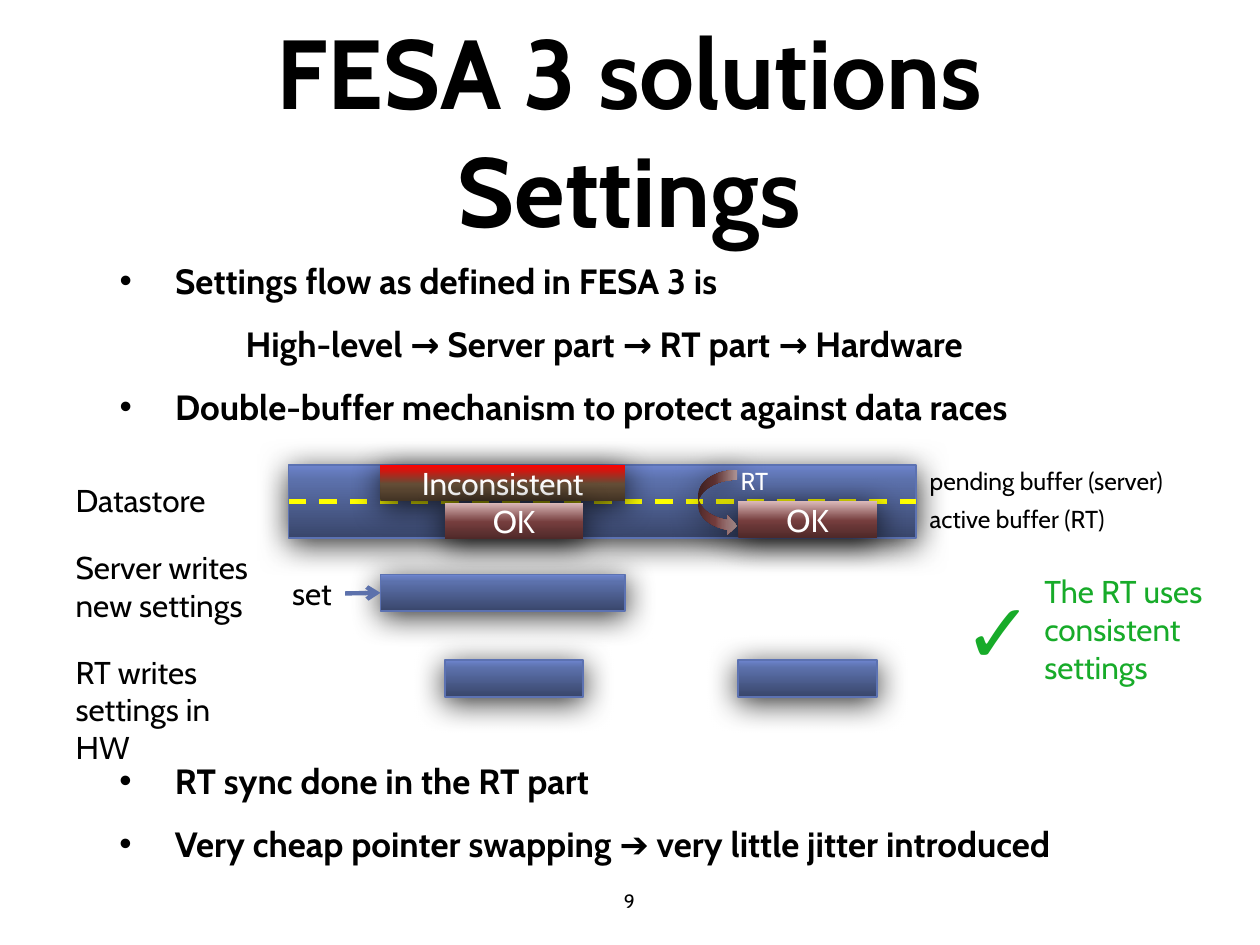
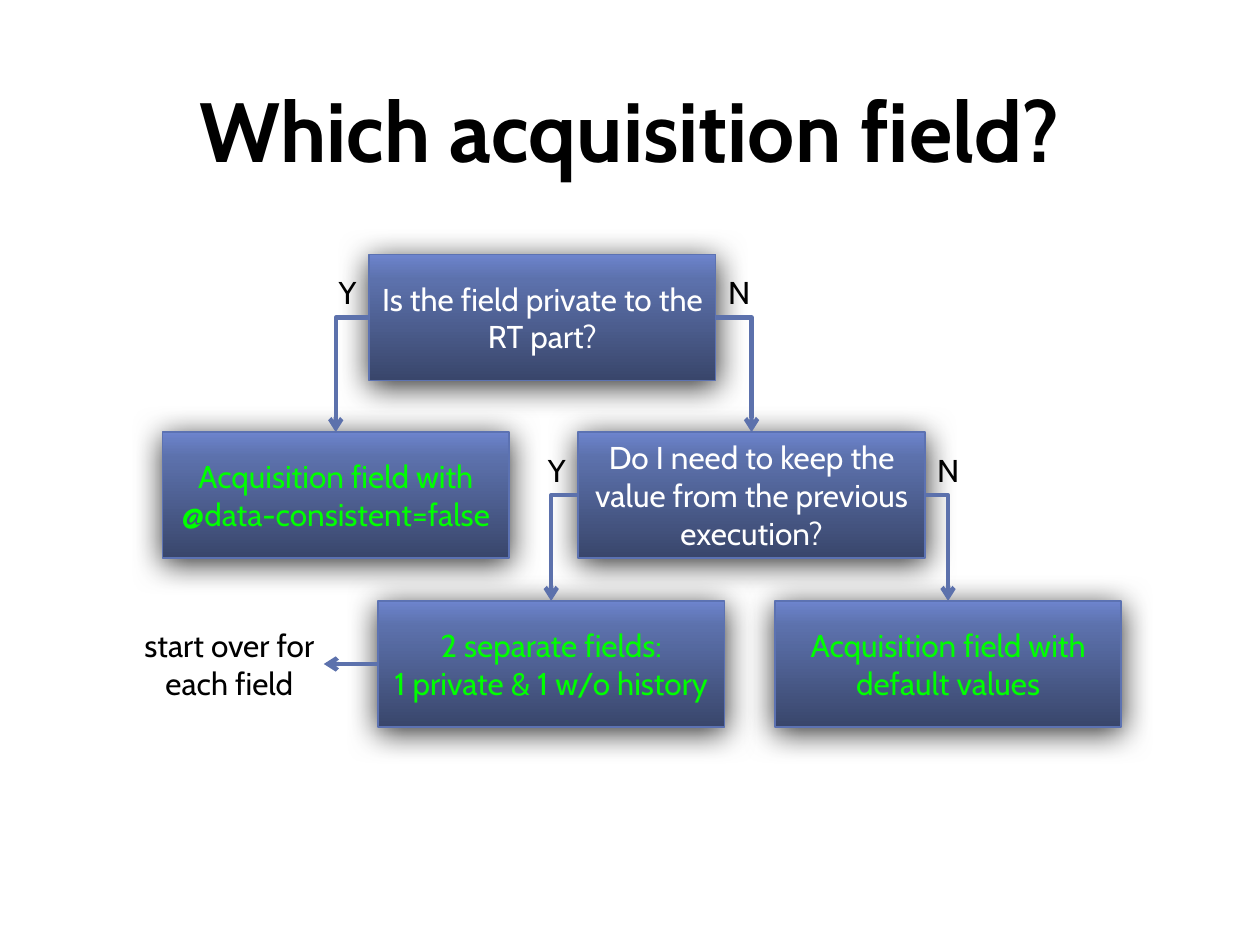
from dataclasses import dataclass
from typing import Any

import pptx
import pptx.dml.color
import pptx.enum.dml
import pptx.enum.shapes
import pptx.enum.text
import pptx.oxml.ns
import pptx.util
from lxml import etree

Inches = pptx.util.Inches
Pt = pptx.util.Pt
qn = pptx.oxml.ns.qn
Align = pptx.enum.text.PP_ALIGN
Anchor = pptx.enum.text.MSO_ANCHOR
Preset = pptx.enum.shapes.MSO_SHAPE

# Shared look
FONT = "Cabin"
BLACK, WHITE, GREEN, LIME, YELLOW = "000000", "FFFFFF", "17AB29", "00FF00", "FFFF00"
EDGE, ARROW = "5C72B2", "5C71AC"
TITLE_AT = (0.85, 0.12, 8.29, 1.81)
TOP, LEFT, BOTTOM, RIGHT = range(4)


@dataclass(frozen=True)
class Gradient:
    stops: tuple[tuple[int, str], ...]
    angle: int = 90


BLUE = Gradient(((0, "39466B"), (80, "5C71AC"), (100, "6D84CD")))
RED = Gradient(((0, "423324"), (48, "634D36"), (100, "FF0000")))
ROSE = Gradient(((0, "4E2929"), (47, "753D3D"), (100, "DAB8B8")))
ROSE_SIDEWAYS = Gradient(((0, "4E2929"), (43, "753D3D"), (100, "DAB8B8")), 180)


@dataclass(frozen=True)
class Block:
    at: tuple[float, float, float, float]
    text: str = ""
    color: str = WHITE
    gradient: Gradient = BLUE
    edge: str | None = EDGE
    preset: Any = Preset.RECTANGLE


@dataclass(frozen=True)
class Label:
    at: tuple[float, float, float, float]
    text: str
    size: int = 18
    color: str = BLACK
    wrap: bool = False
    inset: bool = True
    align: Any = Align.LEFT


@dataclass(frozen=True)
class Item:
    text: str
    bullet: bool = True


def rgb(value: str) -> pptx.dml.color.RGBColor:
    return pptx.dml.color.RGBColor.from_string(value)


def apply(target: Any, values: dict[str, Any]) -> None:
    for name, value in values.items():
        setattr(target, name, value)


def child(parent: Any, tag: str, **attributes: Any) -> Any:
    return etree.SubElement(parent, qn(tag), {k: str(v) for k, v in attributes.items()})


def place(shape: Any, at: tuple[float, ...]) -> None:
    apply(shape, dict(zip(("left", "top", "width", "height"), map(Inches, at))))


def style_font(para: Any, size: float, color: str, bold: bool = False) -> None:
    for span in para.runs:
        apply(span.font, {"name": FONT, "size": Pt(size), "bold": bold})
        span.font.color.rgb = rgb(color)


def write(frame: Any, text: str, size: float, color: str, align: Any, bold: bool = False) -> None:
    frame.text = text
    for para in frame.paragraphs:
        para.alignment = align
        style_font(para, size, color, bold)


def add_page(deck: Any, layout: int, title: str, size: int) -> Any:
    page = deck.slides.add_slide(deck.slide_layouts[layout])
    page.background.fill.solid()
    page.background.fill.fore_color.rgb = rgb(WHITE)
    box = page.shapes.title
    place(box, TITLE_AT)
    apply(box.text_frame, {"vertical_anchor": Anchor.MIDDLE, "word_wrap": True,
                           "auto_size": pptx.enum.text.MSO_AUTO_SIZE.NONE})
    write(box.text_frame, title, size, BLACK, Align.CENTER, bold=True)
    return page


def add_block(page: Any, block: Block) -> Any:
    box = page.shapes.add_shape(block.preset, *map(Inches, block.at))
    # Gradient fill
    box.fill.gradient()
    box.fill.gradient_angle = block.gradient.angle
    stops = box._element.spPr.find(qn("a:gradFill")).find(qn("a:gsLst"))
    for stop in list(stops):
        stops.remove(stop)
    for position, color in block.gradient.stops:
        child(child(stops, "a:gs", pos=position * 1000), "a:srgbClr", val=color)
    # Outline
    if block.edge:
        box.line.color.rgb = rgb(block.edge)
        box.line.width = Pt(1)
    else:
        box.line.fill.background()
    # Soft shadow
    box.shadow.inherit = False
    effects = box._element.spPr.find(qn("a:effectLst"))
    shadow = child(effects, "a:outerShdw", blurRad=Pt(18), dist=Pt(3), dir=5400000, rotWithShape=0)
    child(child(shadow, "a:srgbClr", val=BLACK), "a:alpha", val=80000)
    if block.text:
        apply(box.text_frame, {"word_wrap": True, "vertical_anchor": Anchor.MIDDLE})
        write(box.text_frame, block.text, 18, block.color, Align.CENTER)
    return box


def add_label(page: Any, label: Label) -> None:
    frame = page.shapes.add_textbox(*map(Inches, label.at)).text_frame
    frame.word_wrap = label.wrap
    if not label.inset:
        apply(frame, dict.fromkeys(
            ("margin_left", "margin_top", "margin_right", "margin_bottom"), 0))
    write(frame, label.text, label.size, label.color, label.align)


def fill_list(box: Any, items: list[Item]) -> None:
    frame = box.text_frame
    apply(frame, {"word_wrap": True, "vertical_anchor": Anchor.TOP, "margin_bottom": 0,
                  "auto_size": pptx.enum.text.MSO_AUTO_SIZE.NONE})
    frame.text = "\n".join(item.text for item in items)
    for index, (para, item) in enumerate(zip(frame.paragraphs, items)):
        props = para._p.get_or_add_pPr()
        props.set("marL", str(Inches(0.44 if item.bullet else 1)))
        props.set("indent", str(Inches(-0.44 if item.bullet else 0)))
        if item.bullet:
            child(props, "a:buFont", typeface="Arial")
            child(props, "a:buChar", char="•")
        else:
            child(props, "a:buNone")
        apply(para, {"space_before": Pt(12 if index else 0), "line_spacing": 1.0})
        style_font(para, 20, BLACK, bold=True)


def add_line(page: Any, start: tuple[float, float], end: tuple[float, float],
             color: str = ARROW, dashed: bool = False, bent: bool = False) -> Any:
    kinds = pptx.enum.shapes.MSO_CONNECTOR
    line = page.shapes.add_connector(kinds.ELBOW if bent else kinds.STRAIGHT,
                                     *map(Inches, (*start, *end)))
    line.line.color.rgb = rgb(color)
    line.line.width = Pt(2.5)
    props = line._element.spPr
    if bent:
        props.find(qn("a:prstGeom")).set("prst", "bentConnector2")
    if dashed:
        line.line.dash_style = pptx.enum.dml.MSO_LINE.DASH
    else:
        child(props.find(qn("a:ln")), "a:tailEnd", type="arrow")
    child(props, "a:effectLst")
    return line


def add_branch(page: Any, source: Any, side: int, target: Any) -> None:
    """Elbow arrow from a side of one box to the top of another."""
    start_x = source.left + (source.width if side == RIGHT else 0)
    start = (start_x, source.top + source.height // 2)
    end = (target.left + target.width // 2, target.top)
    line = add_line(page, tuple(pptx.util.Emu(v).inches for v in start),
                    tuple(pptx.util.Emu(v).inches for v in end), bent=True)
    line.begin_connect(source, side)
    line.end_connect(target, TOP)


def build_settings(deck: Any) -> None:
    page = add_page(deck, 1, "FESA 3 solutions\vSettings", 56)
    datastore = add_block(page, Block((2.29, 3.69, 4.98, 0.58)))

    # Bullet lists above and below the diagram
    body = page.placeholders[1]
    place(body, (0.85, 2.01, 8.57, 2.39))
    fill_list(body, [Item("Settings flow as defined in FESA 3 is"),
                     Item("High-level → Server part → RT part → Hardware", bullet=False),
                     Item("Double-buffer mechanism to protect against data races")])
    lower = page.shapes.add_textbox(*map(Inches, (0.85, 5.98, 8.57, 1)))
    fill_list(lower, [Item("RT sync done in the RT part"),
                      Item("Very cheap pointer swapping ➔ very little jitter introduced")])

    # Timeline bars
    server_left, first_left, second_left = 3.02, 3.53, 5.86
    server_width, rt_width, bar_height = 1.94, 1.1, 0.29
    server_write = add_block(page, Block((server_left, 4.56, server_width, bar_height)))
    for left in (first_left, second_left):
        add_block(page, Block((left, 5.24, rt_width, bar_height)))
    add_line(page, (2.74, 4.71), (3.02, 4.71)).end_connect(server_write, LEFT)
    divider = add_line(page, (2.29, 3.98), (7.27, 3.98), YELLOW, dashed=True)
    divider.begin_connect(datastore, LEFT)
    divider.end_connect(datastore, RIGHT)

    # Buffer states
    add_block(page, Block((server_left, 3.69, server_width, bar_height), "Inconsistent",
                          gradient=RED, edge=None))
    swap = add_block(page, Block((5.54, 3.73, 0.31, 0.52), gradient=ROSE_SIDEWAYS, edge=None,
                                 preset=Preset.CURVED_LEFT_ARROW))
    swap._element.spPr.find(qn("a:xfrm")).set("flipH", "1")
    for left, top in ((first_left, 3.99), (second_left, 3.98)):
        add_block(page, Block((left, top, rt_width, bar_height), "OK", gradient=ROSE, edge=None))

    # Labels and verdict
    for label in (
        Label((5.78, 3.65, 0.43, 0.34), "RT", 14, WHITE),
        Label((0.6, 3.82, 1.06, 0.3), "Datastore", inset=False),
        Label((0.6, 4.35, 1.91, 0.61), "Server writes\nnew settings", wrap=True, inset=False),
        Label((0.6, 5.18, 1.4, 0.91), "RT writes\nsettings in HW", wrap=True, inset=False),
        Label((2.22, 4.51, 0.53, 0.4), "set"),
        Label((7.28, 3.65, 2.14, 0.34), "pending buffer (server)", 14),
        Label((7.28, 3.95, 1.65, 0.34), "active buffer (RT)", 14),
        Label((8.19, 4.49, 1.76, 1.01), "The RT uses consistent settings", 18, GREEN, wrap=True),
        Label((7.55, 4.55, 0.73, 0.91), "✓", 48, GREEN),
        Label((4.58, 7.01, 0.83, 0.28), "9", 11, wrap=True, align=Align.CENTER),
    ):
        add_label(page, label)


def build_acquisition(deck: Any) -> None:
    page = add_page(deck, 5, "Which acquisition field?", 48)

    # Decision boxes
    def decision(left: float, top: float, text: str, color: str = LIME) -> Any:
        return add_block(page, Block((left, top, 2.75, 1), text, color))

    private = decision(2.93, 2.02, "Is the field private to the RT part?", WHITE)
    inconsistent = decision(1.29, 3.43, "Acquisition field with @data-consistent=false")
    history = decision(4.59, 3.43, "Do I need to keep the value from the previous execution?", WHITE)
    defaults = decision(6.15, 4.77, "Acquisition field with default values")
    separate = decision(3, 4.77, "2 separate fields:\n1 private & 1 w/o history")

    # Yes and no branches
    for question, yes, no in ((private, inconsistent, history), (history, separate, defaults)):
        add_branch(page, question, LEFT, yes)
        add_branch(page, question, RIGHT, no)
        top = question.top.inches + 0.1
        left, right = question.left.inches, (question.left + question.width) / Inches(1)
        add_label(page, Label((left - 0.34, top, 0.34, 0.4), "Y"))
        add_label(page, Label((right, top, 0.37, 0.4), "N"))

    # Loop back
    add_label(page, Label((1.06, 4.97, 1.52, 0.61), "start over for each field",
                          wrap=True, inset=False, align=Align.CENTER))
    add_line(page, (3, 5.27), (2.57, 5.27)).begin_connect(separate, LEFT)


def main() -> None:
    deck = pptx.Presentation()
    apply(deck, {"slide_width": Inches(10), "slide_height": Inches(7.5)})
    build_settings(deck)
    build_acquisition(deck)
    deck.save("out.pptx")


if __name__ == "__main__":
    main()
